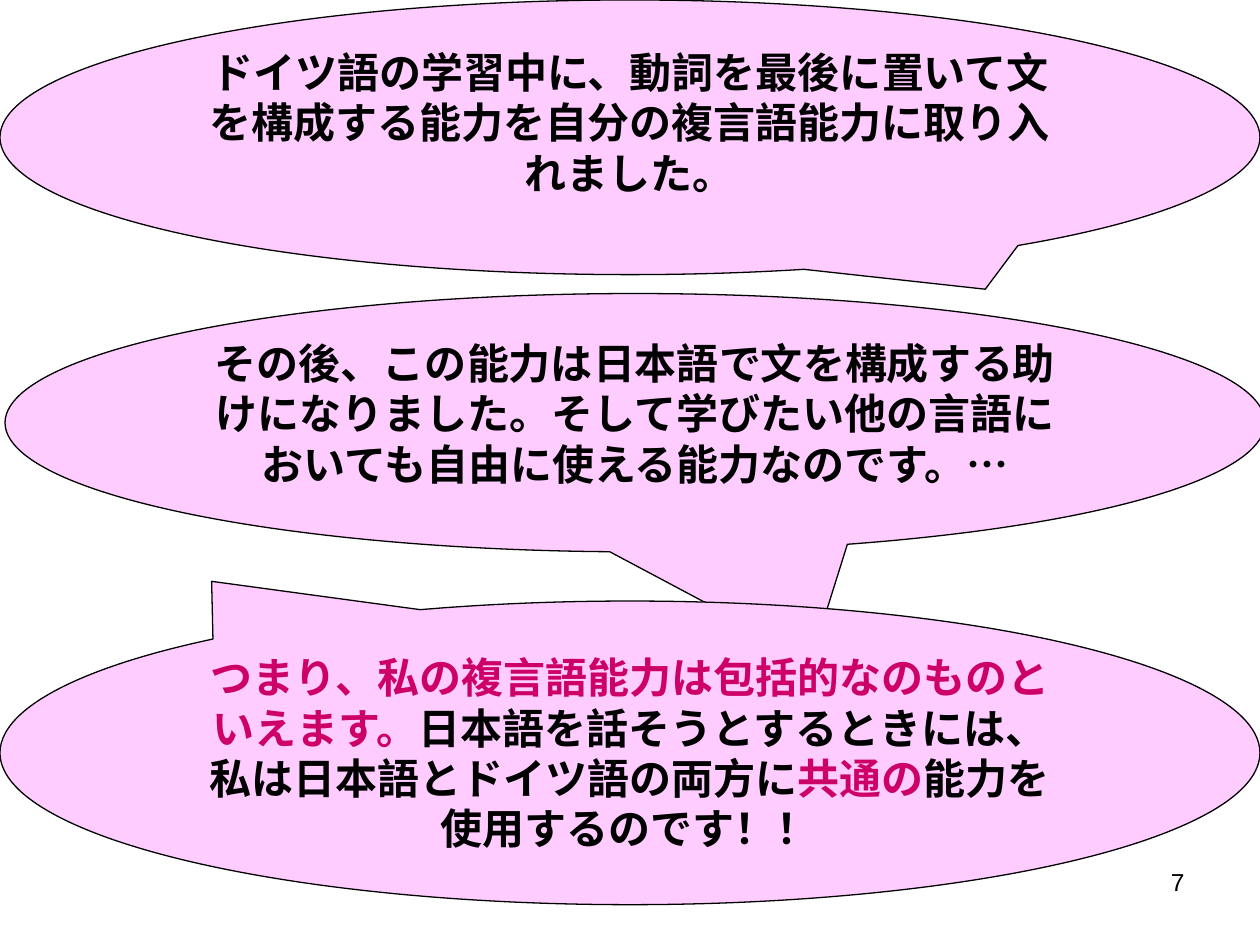
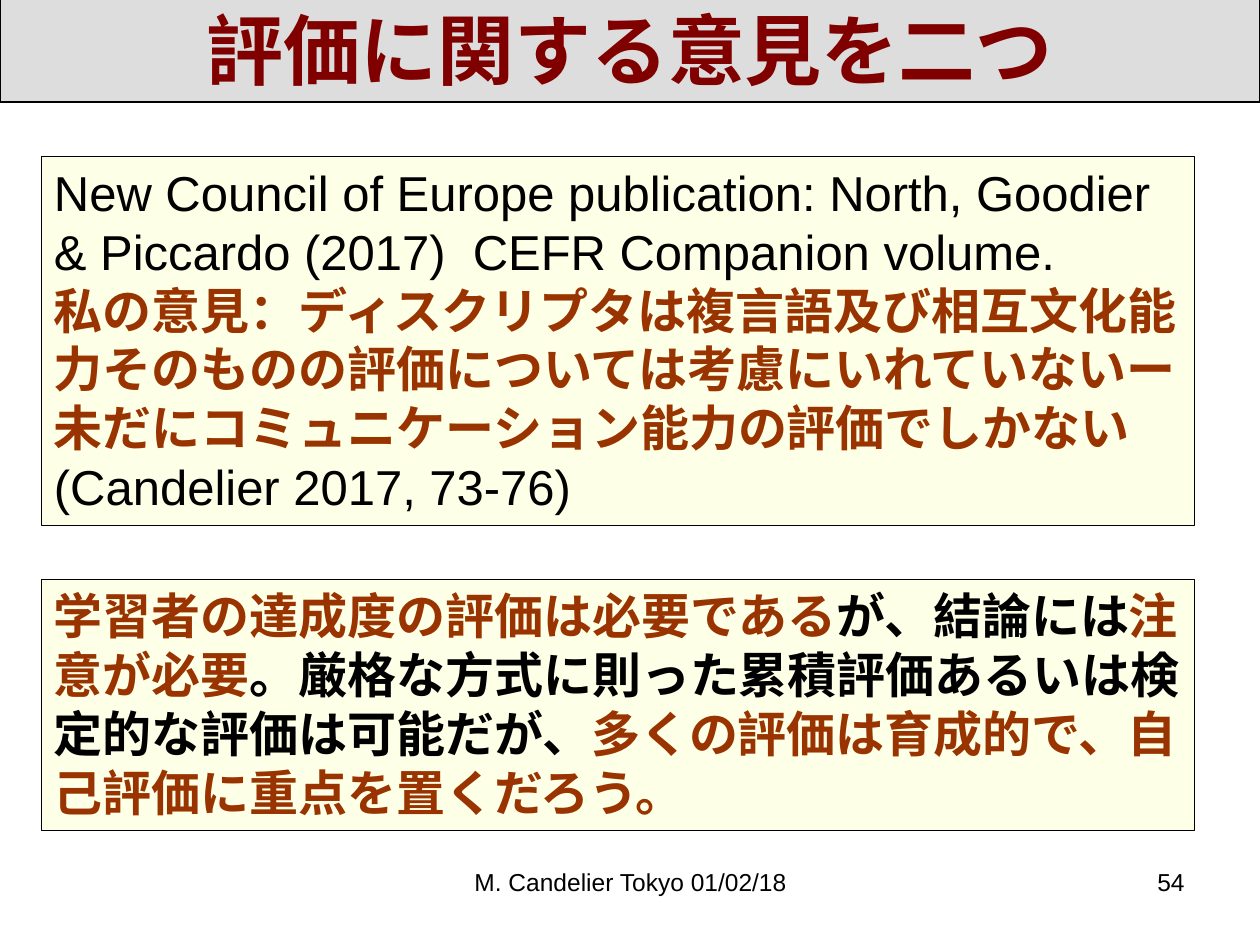
import pptx
import pptx.dml.color
import pptx.enum.shapes
import pptx.enum.text
import pptx.oxml
import pptx.oxml.ns
import pptx.util
from pptx.util import Inches

RGBColor = pptx.dml.color.RGBColor
Shapes = pptx.enum.shapes.MSO_SHAPE
Align = pptx.enum.text.PP_ALIGN
Anchor = pptx.enum.text.MSO_ANCHOR

BLACK = RGBColor(0x00, 0x00, 0x00)
PINK = RGBColor(0xFF, 0xCC, 0xFF)
MAGENTA = RGBColor(0xCC, 0x00, 0x66)
BAND_GREY = RGBColor(0xDD, 0xDD, 0xDD)
TITLE_RED = RGBColor(0x80, 0x00, 0x00)
CREAM = RGBColor(0xFD, 0xFF, 0xE5)
BROWN = RGBColor(0x99, 0x33, 0x00)

BODY_FONT = "Arial"
TITLE_FONT = "Times New Roman"


# Text: a paragraph is a list of (text, colour, bold) runs
def write_text(shape, paragraphs, size, align=Align.LEFT, font=BODY_FONT):
    frame = shape.text_frame
    frame.word_wrap = True
    for index, runs in enumerate(paragraphs):
        paragraph = frame.paragraphs[0] if index == 0 else frame.add_paragraph()
        paragraph.alignment = align
        paragraph.font.name = font
        paragraph.font.size = pptx.util.Pt(size)
        for text, colour, bold in runs:
            run = paragraph.add_run()
            run.text = text
            run.font.color.rgb = colour
            run.font.bold = bold


# Outlined shape with its text starting at the top
def add_panel(slide, preset, box, fill, line_width=0.75):
    shape = slide.shapes.add_shape(preset, *map(Inches, box))
    shape.shadow.inherit = False
    shape.fill.solid()
    shape.fill.fore_color.rgb = fill
    shape.line.color.rgb = BLACK
    shape.line.width = pptx.util.Pt(line_width)
    shape.text_frame.vertical_anchor = Anchor.TOP
    return shape


def add_callout(slide, box, tail, runs):
    callout = add_panel(slide, Shapes.OVAL_CALLOUT, box, PINK)
    callout.adjustments[0], callout.adjustments[1] = tail
    write_text(callout, [runs], 24, Align.CENTER)


def add_title_band(slide, title):
    band = add_panel(slide, Shapes.RECTANGLE, (0, -0.03, 10, 0.84), BAND_GREY, 1.5)
    band.text_frame.vertical_anchor = Anchor.MIDDLE
    write_text(band, [[(title, TITLE_RED, True)]], 44, Align.CENTER, TITLE_FONT)


def add_opinion_box(slide, top, height, paragraphs):
    box = add_panel(slide, Shapes.RECTANGLE, (0.33, top, 9.15, height), CREAM)
    colour = box.fill._xPr.find(".//" + pptx.oxml.ns.qn("a:srgbClr"))
    alpha = pptx.oxml.parse_xml(
        f'<a:alpha {pptx.oxml.ns.nsdecls("a")} val="89000"/>')
    colour.append(alpha)
    write_text(box, paragraphs, 28)
    box.text_frame.auto_size = pptx.enum.text.MSO_AUTO_SIZE.SHAPE_TO_FIT_TEXT


# Footer row
def add_footer_text(slide, left, width, text, align):
    box = slide.shapes.add_textbox(*map(Inches, (left, 6.83, width, 0.52)))
    write_text(box, [[(text, BLACK, False)]], 14, align)


def add_slide_number(slide, number):
    add_footer_text(slide, 7.17, 2.33, str(number), Align.RIGHT)


def build_callout_slide(slide):
    add_callout(slide, (0.04, 2.33, 10, 2.05), (0.14, 0.915), [
        ("その後、この能力は日本語で文を構成する助けになりました。"
         "そして学びたい他の言語においても自由に使える能力なのです。…", BLACK, True)])
    add_callout(slide, (0, 0, 10, 2.18), (0.282, 0.553), [
        ("ドイツ語の学習中に、動詞を最後に置いて文を構成する能力を"
         "自分の複言語能力に取り入れました。", BLACK, True)])
    add_callout(slide, (0, 4.77, 10, 2.41), (-0.332, -0.565), [
        ("つまり、私の複言語能力は包括的なのものといえます。", MAGENTA, True),
        ("日本語を話そうとするときには、私は日本語とドイツ語の両方に", BLACK, True),
        ("共通の", MAGENTA, True),
        ("能力を使用するのです！！", BLACK, True)])
    add_slide_number(slide, 7)


def build_opinion_slide(slide):
    add_footer_text(slide, 3.42, 3.17, "M. Candelier Tokyo 01/02/18", Align.CENTER)
    add_slide_number(slide, 54)
    add_title_band(slide, "評価に関する意見を二つ")
    add_opinion_box(slide, 1.24, 2.93, [
        [("New Council of Europe publication: North, Goodier & Piccardo (2017)  "
          "CEFR Companion volume.", BLACK, False)],
        [("私の意見：ディスクリプタは複言語及び相互文化能力そのものの評価については"
          "考慮にいれていないー未だにコミュニケーション能力の評価でしかない ", BROWN, True),
         ("(Candelier 2017, 73-76)", BLACK, False)]])
    add_opinion_box(slide, 4.6, 1.99, [[
        ("学習者の達成度の評価は必要である", BROWN, True),
        ("が、結論には", BLACK, True),
        ("注意が必要", BROWN, True),
        ("。厳格な方式に則った累積評価あるいは検定的な評価は可能だが、", BLACK, True),
        ("多くの評価は育成的で、自己評価に重点を置くだろう。", BROWN, True)]])


def main():
    presentation = pptx.Presentation()
    presentation.slide_width = Inches(10)
    presentation.slide_height = Inches(7.5)
    blank = presentation.slide_layouts[6]
    for build in (build_callout_slide, build_opinion_slide):
        build(presentation.slides.add_slide(blank))
    presentation.save("out.pptx")


if __name__ == "__main__":
    main()
